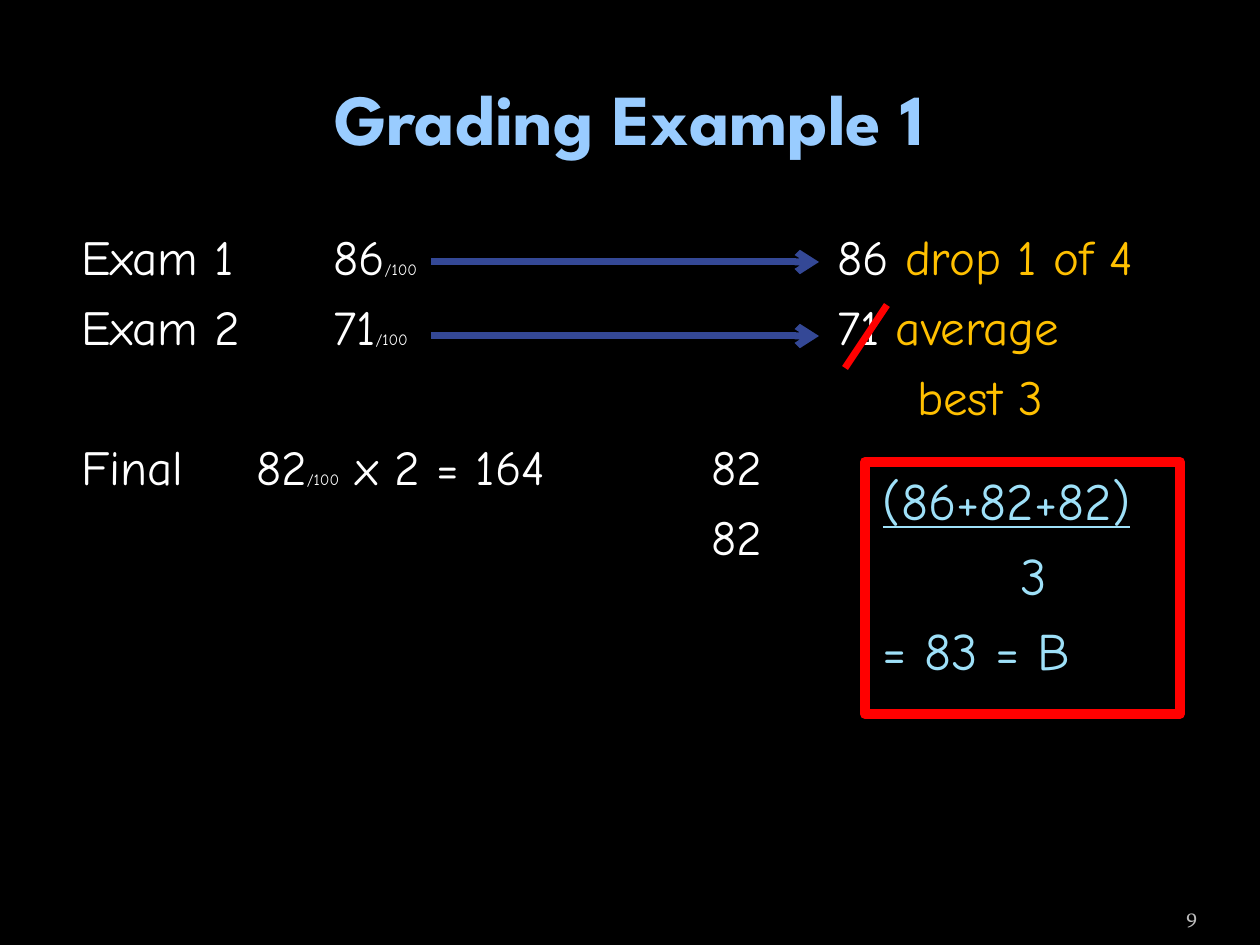
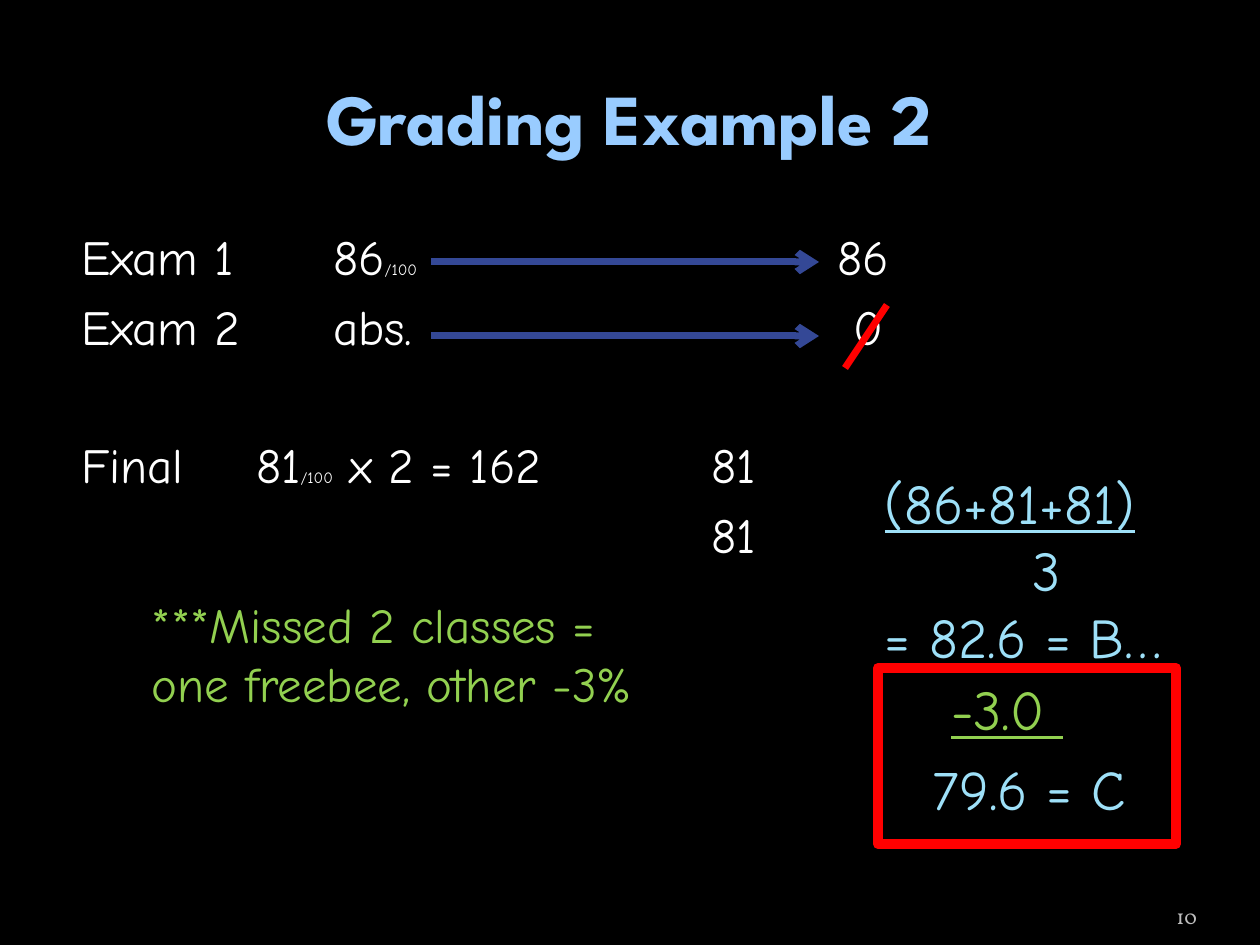
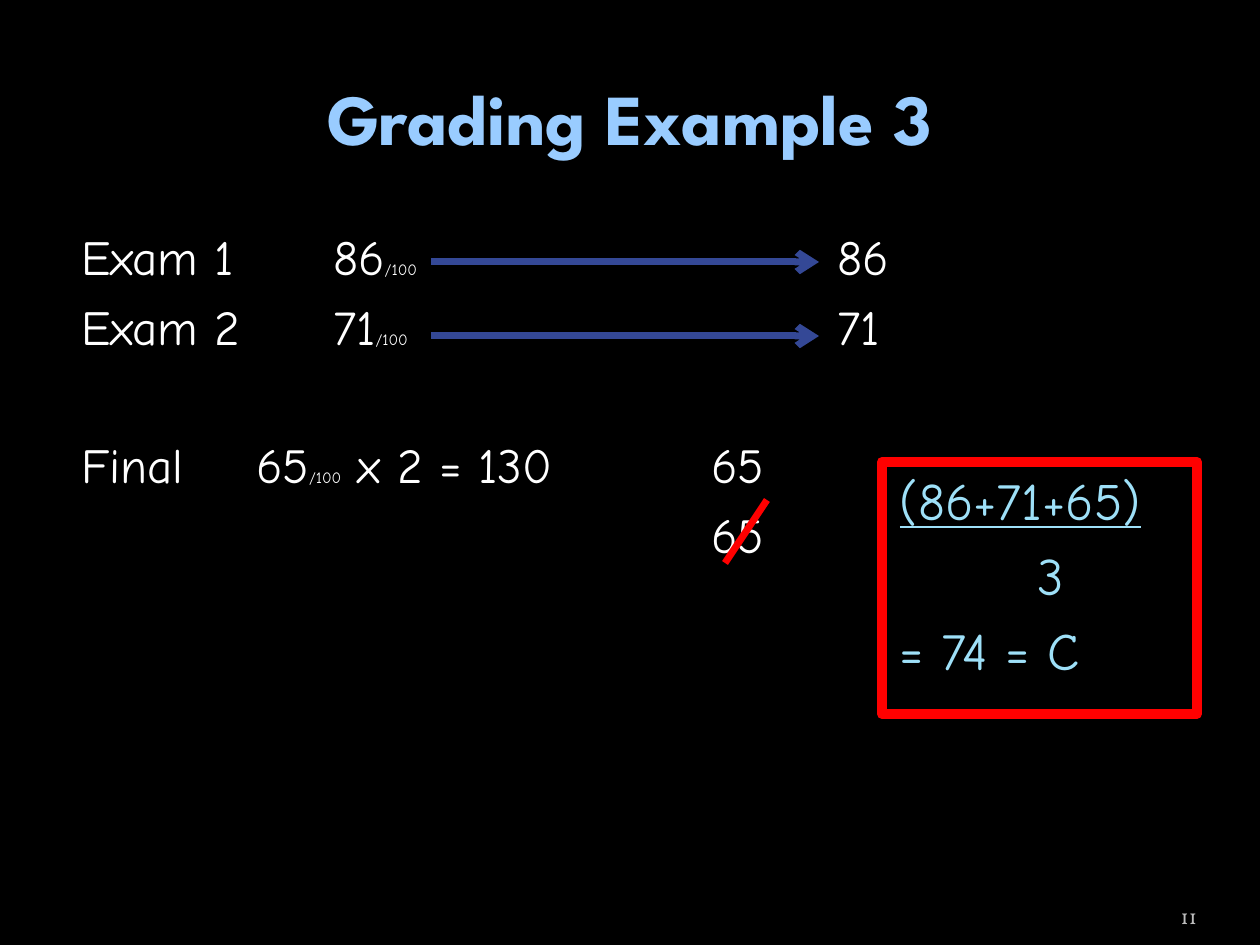
from dataclasses import dataclass

from lxml.etree import SubElement
from pptx import Presentation
from pptx.dml.color import RGBColor
from pptx.enum.shapes import MSO_CONNECTOR, MSO_SHAPE
from pptx.enum.text import MSO_ANCHOR, PP_ALIGN
from pptx.oxml.ns import qn
from pptx.util import Emu, Pt

PX_PER_INCH = 126
BLACK, WHITE, GREY = "000000", "FFFFFF", "BDBDBD"
TITLE_BLUE, ARROW_BLUE, RESULT_BLUE = "99CCFF", "344896", "9EE0F8"
RED, ORANGE, GREEN = "FF0000", "FFC000", "92D050"
BODY_FONT, TITLE_FONT, NUMBER_FONT = "Comic Neue", "League Spartan", "Vollkorn"

# Vertical rhythm, as shares of the text size
ROW_GAP, LINE_HEIGHT = 0.23, 1.17

# Tab stops of the score table, from the left edge of its text
EXAM_STOPS = (252, 756)
FINAL_STOPS = (175, 630)
BEST_INDENT = 836


@dataclass
class Span:
    text: str
    size: int = 0
    color: str = ""


@dataclass
class Line:
    spans: list
    indent: int = 0
    stops: tuple = ()
    skipped_rows: int = 0
    underline: bool = False
    color: str = ""


def px(length):
    return Emu(round(length * 914400 / PX_PER_INCH))


def rgb(color):
    return RGBColor.from_string(color)


def style_font(font, name, size, color):
    font.name = name
    font.size = Pt(size)
    font.color.rgb = rgb(color)


def write_lines(frame, lines, size, color, gap=ROW_GAP):
    """Fill a frame with body lines, spaced by a share of their size."""
    frame.word_wrap = True
    frame.vertical_anchor = MSO_ANCHOR.TOP
    for index, line in enumerate(lines):
        para = frame.paragraphs[0] if index == 0 else frame.add_paragraph()
        para.alignment = PP_ALIGN.LEFT
        if index:
            blank = line.skipped_rows * (LINE_HEIGHT + gap)
            para.space_before = Pt(round(size * (gap + blank), 1))
        properties = para._p.get_or_add_pPr()
        if line.indent:
            properties.set("marL", str(px(line.indent)))
        if line.stops:
            tabs = SubElement(properties, qn("a:tabLst"))
            for stop in line.stops:
                SubElement(tabs, qn("a:tab"), pos=str(px(stop)), algn="l")
        style_font(para.font, BODY_FONT, size, line.color or color)
        para.font.underline = line.underline
        for span in line.spans:
            run = para.add_run()
            run.text = span.text
            if span.size:
                run.font.size = Pt(span.size)
            if span.color:
                run.font.color.rgb = rgb(span.color)


def add_label(page, box, text, font, size, color, align, anchor):
    frame = page.shapes.add_textbox(*map(px, box)).text_frame
    frame.word_wrap = True
    frame.vertical_anchor = anchor
    para = frame.paragraphs[0]
    para.text = text
    para.alignment = align
    style_font(para.font, font, size, color)
    return frame


def add_line(page, start, end, color, arrow=False):
    line = page.shapes.add_connector(
        MSO_CONNECTOR.STRAIGHT, *map(px, (*start, *end)))
    line.line.color.rgb = rgb(color)
    line.line.width = Pt(4)
    properties = line.element.spPr
    if arrow:
        SubElement(properties.find(qn("a:ln")), qn("a:tailEnd"), type="arrow")
    SubElement(properties, qn("a:effectLst"))


def add_frame_parts(deck, title, number):
    """Background, title and page number."""
    page = deck.slides.add_slide(deck.slide_layouts[6])
    page.background.fill.solid()
    page.background.fill.fore_color.rgb = rgb(BLACK)
    heading = add_label(page, (63, 38, 1134, 158), title, TITLE_FONT, 41,
                        TITLE_BLUE, PP_ALIGN.CENTER, MSO_ANCHOR.MIDDLE)
    heading.paragraphs[0].font.bold = True
    footer = add_label(page, (1092, 885, 105, 50), str(number), NUMBER_FONT,
                       12, GREY, PP_ALIGN.RIGHT, MSO_ANCHOR.BOTTOM)
    footer.margin_left = footer.margin_right = 0
    return page


def add_text(page, box, lines, size, color, gap=ROW_GAP, margin=18):
    frame = page.shapes.add_textbox(*map(px, box)).text_frame
    frame.margin_left = px(margin)
    write_lines(frame, lines, size, color, gap)


def add_result(page, box, lines, size):
    """Red frame around the final grade."""
    shape = page.shapes.add_shape(MSO_SHAPE.RECTANGLE, *map(px, box))
    shape.shadow.inherit = False
    shape.fill.background()
    shape.line.color.rgb = rgb(RED)
    shape.line.width = Pt(5.75)
    shape.text_frame.margin_left = px(18)
    write_lines(shape.text_frame, lines, size, RESULT_BLUE)


def exam_line(label, score, kept, remark=""):
    spans = [Span(f"{label}\t{score}")]
    if score.isdigit():
        spans.append(Span("/100", size=9))
    spans.append(Span(f"\t{kept}"))
    if remark:
        spans += [Span(" "), Span(remark, color=ORANGE)]
    return Line(spans, stops=EXAM_STOPS)


def final_lines(score, skipped_rows=0):
    """The final counts twice, so its score stands on two rows."""
    return [
        Line([Span(f"Final\t{score}"), Span("/100", size=9),
              Span(f" x 2 = {score * 2}\t{score}")],
             stops=FINAL_STOPS, skipped_rows=skipped_rows),
        Line([Span(str(score))], indent=FINAL_STOPS[1]),
    ]


def average_lines(total, outcome, indent):
    return [
        Line([Span(total)], underline=True),
        Line([Span("3")], indent=indent),
        Line([Span(outcome)]),
    ]


def add_scores(page, lines, dropped):
    """Score table, arrows to the kept scores, and the dropped score."""
    left, top = 63, 220
    add_text(page, (left, top, 1176, 624), lines, 28, WHITE)
    for row_y in (top + 42, top + 116):
        add_line(page, (left + 368, row_y), (left + 756, row_y),
                 ARROW_BLUE, arrow=True)
    x, y = dropped
    add_line(page, (x, y + 63), (x + 42, y), RED)


def build_first(deck):
    page = add_frame_parts(deck, "Grading Example 1", 9)
    add_scores(page, [
        exam_line("Exam 1", "86", "86", "drop 1 of 4"),
        exam_line("Exam 2", "71", "71", "average"),
        Line([Span("best 3")], indent=BEST_INDENT, color=ORANGE),
        *final_lines(82),
    ], dropped=(845, 305))
    add_result(page, (865, 462, 315, 252),
               average_lines("(86+82+82)", "= 83 = B", 138), 30)


def build_second(deck):
    page = add_frame_parts(deck, "Grading Example 2", 10)
    add_scores(page, [
        exam_line("Exam 1", "86", "86"),
        exam_line("Exam 2", "abs.", " 0"),
        *final_lines(81, skipped_rows=1),
    ], dropped=(845, 305))
    add_result(page, (878, 668, 298, 176), [
        Line([Span("-3.0 ")], indent=55, underline=True, color=GREEN),
        Line([Span("79.6 = C")], indent=37),
    ], 32)
    # Attendance penalty
    add_text(page, (139, 588, 585, 131), [
        Line([Span("***Missed 2 classes =")]),
        Line([Span("one freebee, other -3%")]),
    ], 28, GREEN, gap=0, margin=13)
    # Average before the penalty
    add_text(page, (867, 462, 390, 217),
             average_lines("(86+81+81)", "= 82.6 = B…", 148),
             32, RESULT_BLUE, gap=0)


def build_third(deck):
    page = add_frame_parts(deck, "Grading Example 3", 11)
    add_scores(page, [
        exam_line("Exam 1", "86", "86"),
        exam_line("Exam 2", "71", "71"),
        *final_lines(65, skipped_rows=1),
    ], dropped=(725, 500))
    add_result(page, (882, 462, 315, 252),
               average_lines("(86+71+65)", "= 74 = C", 138), 30)


def main():
    deck = Presentation()
    deck.slide_width, deck.slide_height = px(1260), px(945)
    for build in (build_first, build_second, build_third):
        build(deck)
    deck.save("out.pptx")


if __name__ == "__main__":
    main()
